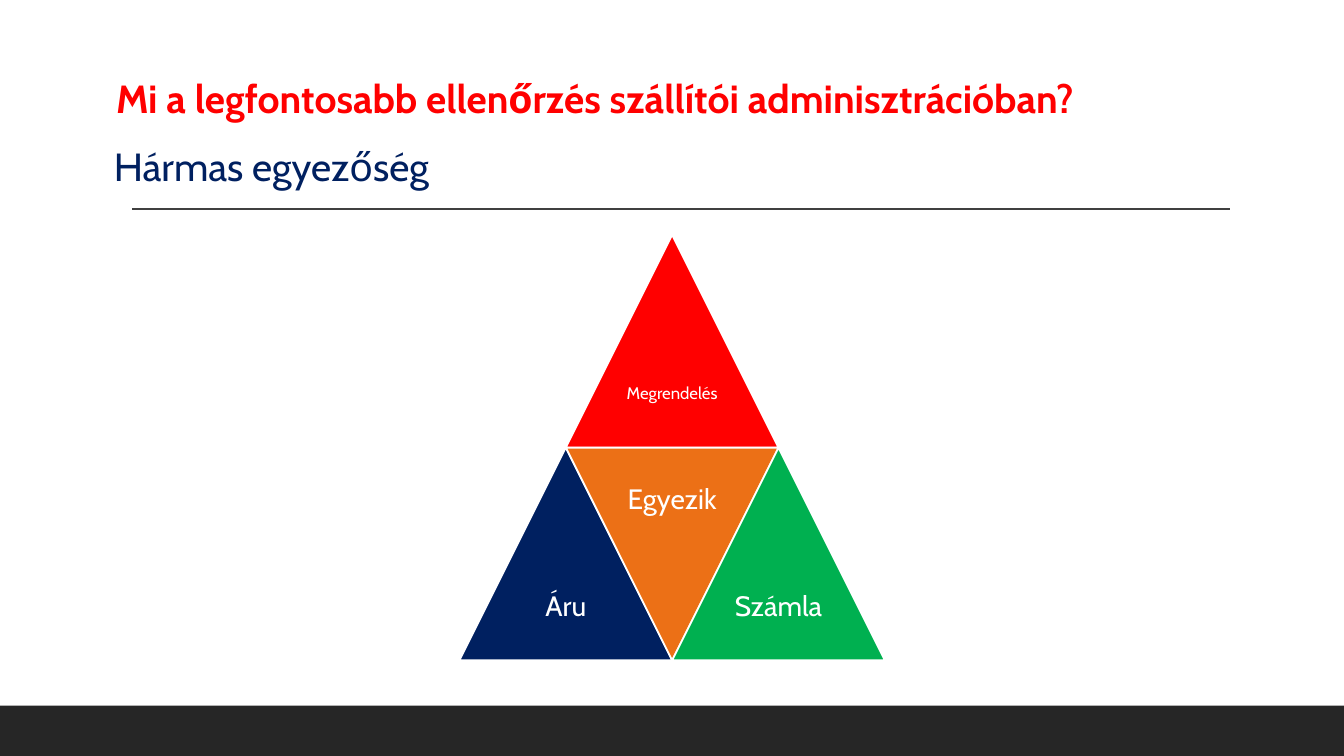
from pptx import Presentation
from pptx.dml.color import RGBColor
from pptx.enum.shapes import MSO_CONNECTOR, MSO_SHAPE
from pptx.enum.text import MSO_ANCHOR, PP_ALIGN
from pptx.oxml.ns import qn
from pptx.util import Cm, Pt
from lxml.etree import SubElement


def colour(value):
    return RGBColor.from_string(value)


def write(box, text, size, fill="FFFFFF", bold=False, align=PP_ALIGN.LEFT,
          anchor=MSO_ANCHOR.TOP, inset=None, spacing=1.0):
    frame = box.text_frame
    frame.word_wrap = True
    frame.vertical_anchor = anchor
    if inset is not None:
        frame.margin_left = frame.margin_right = Cm(inset)
        frame.margin_top = frame.margin_bottom = Cm(inset)
    para = frame.paragraphs[0]
    para.alignment = align
    para.line_spacing = spacing
    para.space_before = Pt(0)
    span = para.add_run()
    span.text = text
    span.font.name = "Cabin"
    span.font.size = Pt(size)
    span.font.bold = bold
    span.font.color.rgb = colour(fill)


deck = Presentation()
deck.slide_width, deck.slide_height = Cm(33.87), Cm(19.05)
page = deck.slides.add_slide(deck.slide_layouts[5])

footer = page.shapes.add_shape(MSO_SHAPE.RECTANGLE, 0, Cm(17.78), deck.slide_width, Cm(1.27))
footer.shadow.inherit = False
footer.fill.solid()
footer.fill.fore_color.rgb = colour("262626")
footer.line.fill.background()

rule = page.shapes.add_connector(MSO_CONNECTOR.STRAIGHT, Cm(3.33), Cm(5.27), Cm(31), Cm(5.27))
rule.line.color.rgb = colour("404040")
rule.line.width = Pt(1)
SubElement(rule._element.spPr, qn("a:effectLst"))

title = page.shapes.title
title.left, title.top, title.width, title.height = Cm(2.67), Cm(1.75), Cm(28.02), Cm(1.45)
write(title, "Mi a legfontosabb ellenőrzés szállítói adminisztrációban?", 28, "FF0000", bold=True)

subtitle = page.shapes.add_textbox(Cm(2.62), Cm(3.45), Cm(21.54), Cm(1.45))
write(subtitle, "Hármas egyezőség", 28, "002060")

# Four equal triangles form one large triangle; columns are half a side apart
side = 5.36
pyramid_left, pyramid_top = 11.58, 5.92
triangles = [
    ("Megrendelés", 12, "FF0000", 1, 0, False),
    ("Áru", 20, "002060", 0, 1, False),
    ("Egyezik", 20, "EC7016", 1, 1, True),
    ("Számla", 20, "00B050", 2, 1, False),
]
for text, size, fill, column, row, inverted in triangles:
    left = pyramid_left + column * side / 2
    top = pyramid_top + row * side
    triangle = page.shapes.add_shape(
        MSO_SHAPE.ISOSCELES_TRIANGLE, Cm(left), Cm(top), Cm(side), Cm(side))
    triangle.shadow.inherit = False
    triangle.rotation = 180 if inverted else 0
    triangle.fill.solid()
    triangle.fill.fore_color.rgb = colour(fill)
    triangle.line.color.rgb = colour("FFFFFF")
    triangle.line.width = Pt(1.25)

    label_top = top if inverted else top + side / 2
    label = page.shapes.add_textbox(
        Cm(left + side / 4), Cm(label_top), Cm(side / 2), Cm(side / 2))
    write(label, text, size, align=PP_ALIGN.CENTER, anchor=MSO_ANCHOR.MIDDLE,
          inset=0.13, spacing=0.9)

deck.save("out.pptx")
